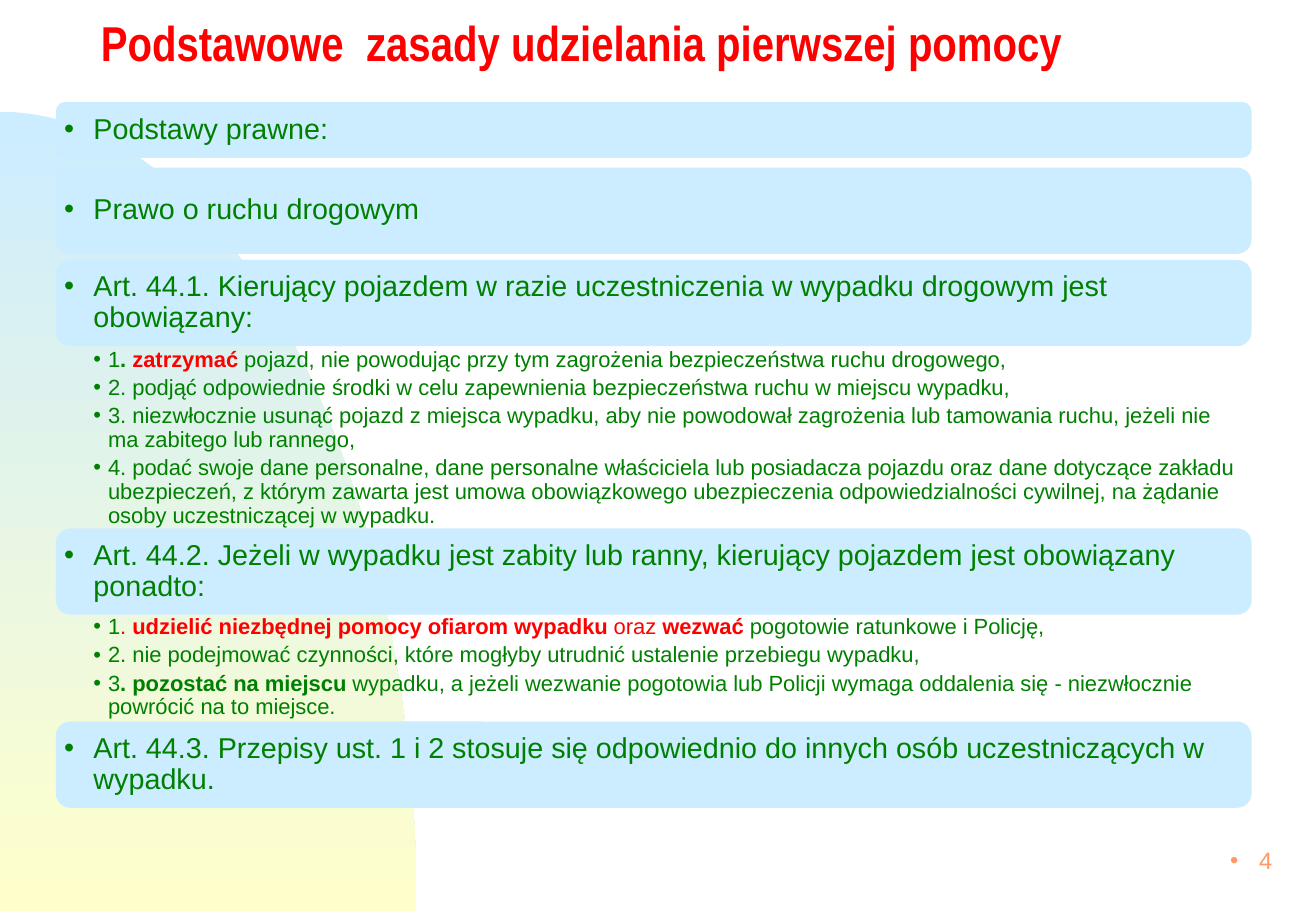
"""Builds a slide on the legal duties of drivers giving first aid."""
import math

from lxml import etree
from pptx import Presentation
from pptx.dml import color
from pptx.enum import shapes, text
from pptx.oxml import ns
from pptx.util import Inches, Pt

GREEN = color.RGBColor(0x00, 0x80, 0x00)
RED = color.RGBColor(0xFF, 0x00, 0x00)
ORANGE = color.RGBColor(0xFF, 0x99, 0x66)
SKY = color.RGBColor(0xCC, 0xEC, 0xFF)
CREAM = color.RGBColor(0xFF, 0xFF, 0xCC)

LEFT, WIDTH = 0.46, 9.84
BARS = [
    (0.84, 0.46, "Podstawy prawne:"),
    (1.38, 0.71, "Prawo o ruchu drogowym"),
    (2.14, 0.71, "Art. 44.1. Kierujący pojazdem w razie uczestniczenia w wypadku drogowym jest obowiązany:"),
    (4.35, 0.71, "Art. 44.2. Jeżeli w wypadku jest zabity lub ranny, kierujący pojazdem jest obowiązany ponadto:"),
    (5.94, 0.71, "Art. 44.3. Przepisy ust. 1 i 2 stosuje się odpowiednio do innych osób uczestniczących w wypadku."),
]
DUTIES = [
    (2.85, 1.5, [
        [("1", GREEN, False), (". ", GREEN, True), ("zatrzymać ", RED, True),
         ("pojazd, nie powodując przy tym zagrożenia bezpieczeństwa ruchu drogowego,", GREEN, False)],
        "2. podjąć odpowiednie środki w celu zapewnienia bezpieczeństwa ruchu w miejscu wypadku,",
        "3. niezwłocznie usunąć pojazd z miejsca wypadku, aby nie powodował zagrożenia lub tamowania ruchu, "
        "jeżeli nie ma zabitego lub rannego,",
        "4. podać swoje dane personalne, dane personalne właściciela lub posiadacza pojazdu oraz dane dotyczące "
        "zakładu ubezpieczeń, z którym zawarta jest umowa obowiązkowego ubezpieczenia odpowiedzialności cywilnej, "
        "na żądanie osoby uczestniczącej w wypadku.",
    ]),
    (5.05, 0.89, [
        [("1", GREEN, False), (". ", RED, False), ("udzielić niezbędnej pomocy ofiarom wypadku ", RED, True),
         ("oraz ", RED, False), ("wezwać ", RED, True), ("pogotowie ratunkowe i Policję,", GREEN, False)],
        "2. nie podejmować czynności, które mogłyby utrudnić ustalenie przebiegu wypadku,",
        [("3", GREEN, False), (". pozostać na miejscu ", GREEN, True),
         ("wypadku, a jeżeli wezwanie pogotowia lub Policji wymaga oddalenia się - niezwłocznie powrócić "
          "na to miejsce.", GREEN, False)],
    ]),
]


def write(shape, paragraphs, size, fill=GREEN, bold=False, font="Arial", align=text.PP_ALIGN.LEFT,
          anchor=text.MSO_ANCHOR.MIDDLE, insets=(0, 0, 0, 0), indent=0, spacing=1.0, after=0):
    frame = shape.text_frame
    frame.word_wrap = True
    frame.auto_size = text.MSO_AUTO_SIZE.NONE
    frame.vertical_anchor = anchor
    frame.margin_left, frame.margin_top, frame.margin_right, frame.margin_bottom = map(Inches, insets)
    for index, content in enumerate(paragraphs):
        paragraph = frame.add_paragraph() if index else frame.paragraphs[0]
        paragraph.alignment = align
        paragraph.line_spacing = spacing
        paragraph.space_after = Pt(after)
        if indent:
            properties = paragraph._p.get_or_add_pPr()
            properties.set("marL", str(Inches(indent)))
            properties.set("indent", str(-Inches(indent)))
            etree.SubElement(properties, ns.qn("a:buFont"), typeface="Arial")
            etree.SubElement(properties, ns.qn("a:buChar"), char="•")
        runs = [(content, fill, bold)] if isinstance(content, str) else content
        for wording, run_color, run_bold in runs:
            run = paragraph.add_run()
            run.text = wording
            run.font.name = font
            run.font.size = Pt(size)
            run.font.bold = run_bold
            run.font.color.rgb = run_color


presentation = Presentation()
presentation.slide_width, presentation.slide_height = Inches(10.83), Inches(7.5)
slide = presentation.slides.add_slide(presentation.slide_layouts[5])

arc = [(3.43 * math.sin(math.radians(angle)), 7.5 - 6.58 * math.cos(math.radians(angle)))
       for angle in range(0, 91, 2)]
builder = slide.shapes.build_freeform(Inches(0), Inches(7.5))
builder.add_line_segments([(Inches(x), Inches(y)) for x, y in arc])
hill = builder.convert_to_shape()
hill.shadow.inherit = False
hill.line.fill.background()
hill.fill.gradient()
hill.fill.gradient_angle = 270
for stop, stop_color, position in zip(hill.fill.gradient_stops, (SKY, CREAM), (0, 1)):
    stop.color.rgb = stop_color
    stop.position = position

for top, height, heading in BARS:
    bar = slide.shapes.add_shape(shapes.MSO_SHAPE.ROUNDED_RECTANGLE,
                                 Inches(LEFT), Inches(top), Inches(WIDTH), Inches(height))
    bar.shadow.inherit = False
    bar.fill.solid()
    bar.fill.fore_color.rgb = SKY
    bar.line.fill.background()
    side = 0.07 - 0.05 * height
    write(bar, [heading], 17, insets=(side, side, side, side), indent=0.24, spacing=0.9)

for top, height, duties in DUTIES:
    box = slide.shapes.add_textbox(Inches(LEFT), Inches(top), Inches(WIDTH), Inches(height))
    write(box, duties, 13, anchor=text.MSO_ANCHOR.TOP, insets=(0.31, 0.02, 0.13, 0.02),
          indent=0.12, spacing=0.9, after=2.6)

title = slide.shapes.title
title.left, title.top, title.width, title.height = Inches(0.53), Inches(0), Inches(9.77), Inches(1.17)
write(title, ["Podstawowe  zasady udzielania pierwszej pomocy"], 29, fill=RED, bold=True,
      font="Arial Narrow", anchor=text.MSO_ANCHOR.TOP, insets=(0.3, 0.1, 0, 0))

number = slide.shapes.add_textbox(Inches(8.31), Inches(6.83), Inches(2.26), Inches(0.5))
write(number, ["4"], 14, fill=ORANGE, align=text.PP_ALIGN.RIGHT, insets=(0.1, 0.05, 0.1, 0.05), indent=0.24)

presentation.save("out.pptx")
